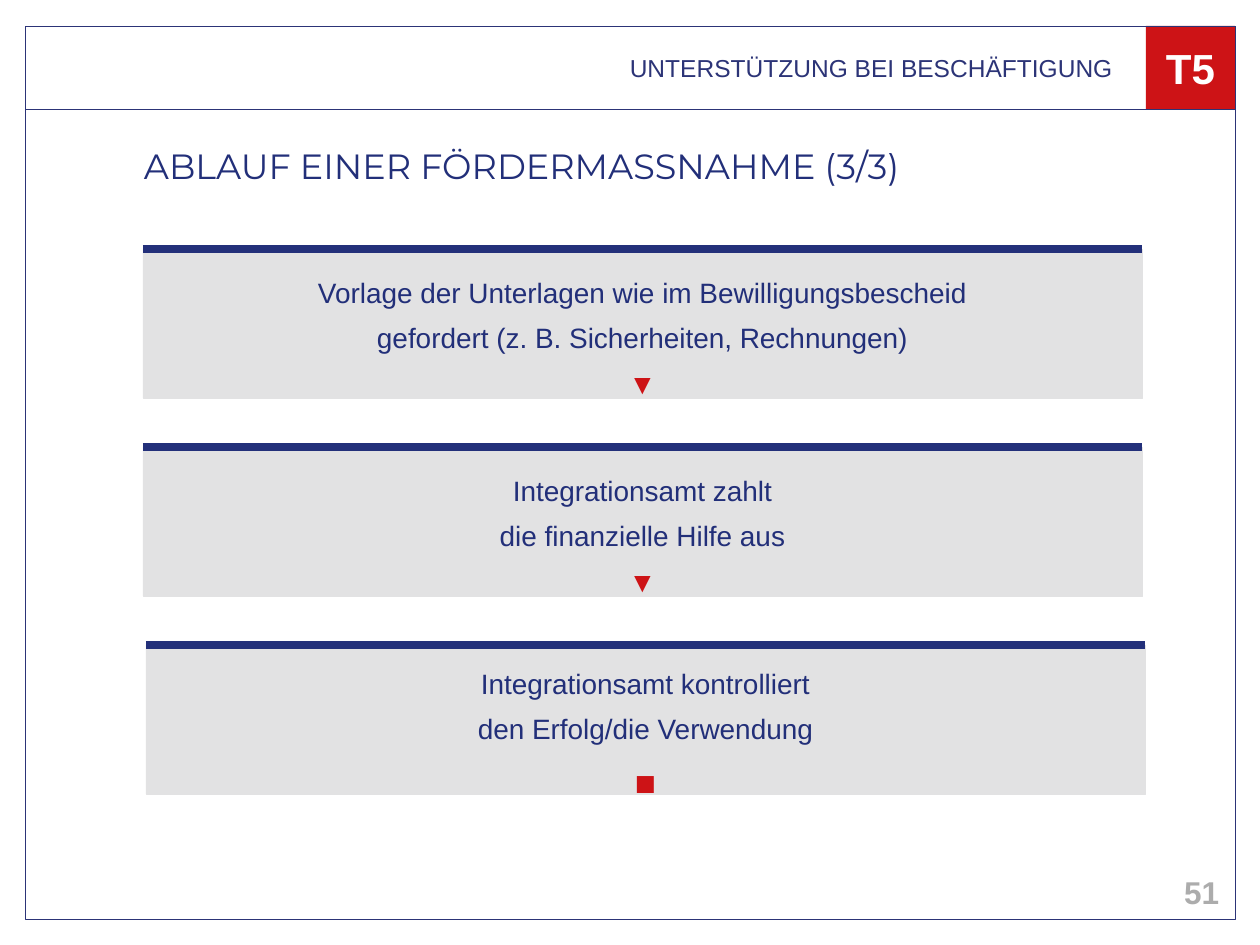
from copy import deepcopy
from dataclasses import dataclass

from lxml import etree
from pptx import Presentation
from pptx.dml.color import RGBColor
from pptx.enum.shapes import MSO_CONNECTOR, MSO_SHAPE
from pptx.enum.text import MSO_ANCHOR, PP_ALIGN
from pptx.oxml.ns import qn
from pptx.util import Pt

PX = 914400 // 126
RECTANGLE = MSO_SHAPE.RECTANGLE
STRAIGHT = MSO_CONNECTOR.STRAIGHT
TOP, MIDDLE = MSO_ANCHOR.TOP, MSO_ANCHOR.MIDDLE
LEFT, CENTER, RIGHT = PP_ALIGN.LEFT, PP_ALIGN.CENTER, PP_ALIGN.RIGHT


@dataclass(frozen=True)
class Theme:
    frame: str = "2C3477"
    text: str = "222F79"
    bar: str = "23307A"
    accent: str = "CD1316"
    panel: str = "E2E2E3"
    page_number: str = "ACACAC"
    white: str = "FFFFFF"
    body_font: str = "Arial"
    title_font: str = "Montserrat"
    header_size: int = 14
    step_size: int = 16
    number_size: int = 18
    title_size: int = 20
    badge_size: int = 24
    hairline: float = 0.25
    bar_width: float = 4.5


class SlideBuilder:
    def __init__(self, page, theme):
        self.page = page
        self.theme = theme

    def rectangle(self, left, top, width, height, line, fill=None):
        shape = self.page.shapes.add_shape(
            RECTANGLE, left * PX, top * PX, width * PX, height * PX)
        shape.shadow.inherit = False
        if fill:
            shape.fill.solid()
            shape.fill.fore_color.rgb = RGBColor.from_string(fill)
        else:
            shape.fill.background()
        shape.line.color.rgb = RGBColor.from_string(line)
        shape.line.width = Pt(self.theme.hairline)

    def bar(self, left, top, width):
        line = self.page.shapes.add_connector(
            STRAIGHT, left * PX, top * PX, (left + width) * PX, top * PX)
        line.line.color.rgb = RGBColor.from_string(self.theme.bar)
        line.line.width = Pt(self.theme.bar_width)
        etree.SubElement(line._element.spPr, qn("a:effectLst"))

    def text_box(self, left, top, width, height, align, anchor=TOP,
                 insets=(13, 6, 13, 6), spacing=None):
        """Add an empty box and return its paragraph; insets run left, top, right, bottom."""
        box = self.page.shapes.add_textbox(
            left * PX, top * PX, width * PX, height * PX)
        frame = box.text_frame
        frame.word_wrap = True
        frame.vertical_anchor = anchor
        (frame.margin_left, frame.margin_top,
         frame.margin_right, frame.margin_bottom) = [inset * PX for inset in insets]
        para = frame.paragraphs[0]
        para.alignment = align
        para.line_spacing = spacing
        return para

    def span(self, para, text, size, color, bold=False, font=None):
        span = para.add_run()
        span.text = text
        span.font.name = font or self.theme.body_font
        span.font.size = Pt(size)
        span.font.bold = bold
        span.font.color.rgb = RGBColor.from_string(color)
        return span

    def line_break(self, para, span):
        """Break the line, keeping the type size of the span before it."""
        para.add_line_break()
        para._p[-1].append(deepcopy(span._r.rPr))

    def step(self, left, top, text_offset, lines, marker, marker_size):
        width, height = 999, 149
        theme = self.theme
        self.rectangle(left, top, width, height, theme.panel, theme.panel)
        self.bar(left, top, width)
        para = self.text_box(left, top + text_offset, width, 126, CENTER, spacing=1.35)
        for line in lines:
            span = self.span(para, line, theme.step_size, theme.text)
            self.line_break(para, span)
        self.span(para, marker, marker_size, theme.accent)


def main():
    deck = Presentation()
    deck.slide_width, deck.slide_height = 1260 * PX, 945 * PX
    theme = Theme()
    page = deck.slides.add_slide(deck.slide_layouts[6])
    builder = SlideBuilder(page, theme)

    left, top, width, header_height = 25, 26, 1210, 83
    badge_width = 89
    badge_left = left + width - badge_width
    builder.rectangle(badge_left, top, badge_width, header_height,
                      theme.accent, theme.accent)
    for height in (header_height, 893):
        builder.rectangle(left, top, width, height, theme.frame)

    title = builder.text_box(144, 149, 961, 83, LEFT, insets=(0, 0, 0, 0), spacing=0.9)
    builder.span(title, "ABLAUF EINER FÖRDERMASSNAHME (3/3)", theme.title_size,
                 theme.text, font=theme.title_font)
    number = builder.text_box(949, 867, 283, 50, RIGHT, MIDDLE)
    builder.span(number, "51", theme.number_size, theme.page_number, bold=True)
    header = builder.text_box(left, top, width - badge_width, header_height,
                              RIGHT, MIDDLE, (0, 0, 33, 0))
    builder.span(header, "UNTERSTÜTZUNG BEI BESCHÄFTIGUNG",
                 theme.header_size, theme.frame)
    badge = builder.text_box(badge_left, top, badge_width, header_height,
                             CENTER, MIDDLE, (0, 0, 0, 0))
    builder.span(badge, "T5", theme.badge_size, theme.white, bold=True)

    steps = [
        (143, 9, ("Vorlage der Unterlagen wie im Bewilligungsbescheid",
                  "gefordert (z. B. Sicherheiten, Rechnungen)"), "▼", theme.step_size),
        (143, 9, ("Integrationsamt zahlt", "die finanzielle Hilfe aus"),
         "▼", theme.step_size),
        (146, 4, ("Integrationsamt kontrolliert", "den Erfolg/die Verwendung"),
         "■", theme.title_size),
    ]
    first_top, pitch = 249, 198
    for index, (step_left, text_offset, lines, marker, marker_size) in enumerate(steps):
        builder.step(step_left, first_top + index * pitch, text_offset,
                     lines, marker, marker_size)

    deck.save("out.pptx")


if __name__ == "__main__":
    main()
